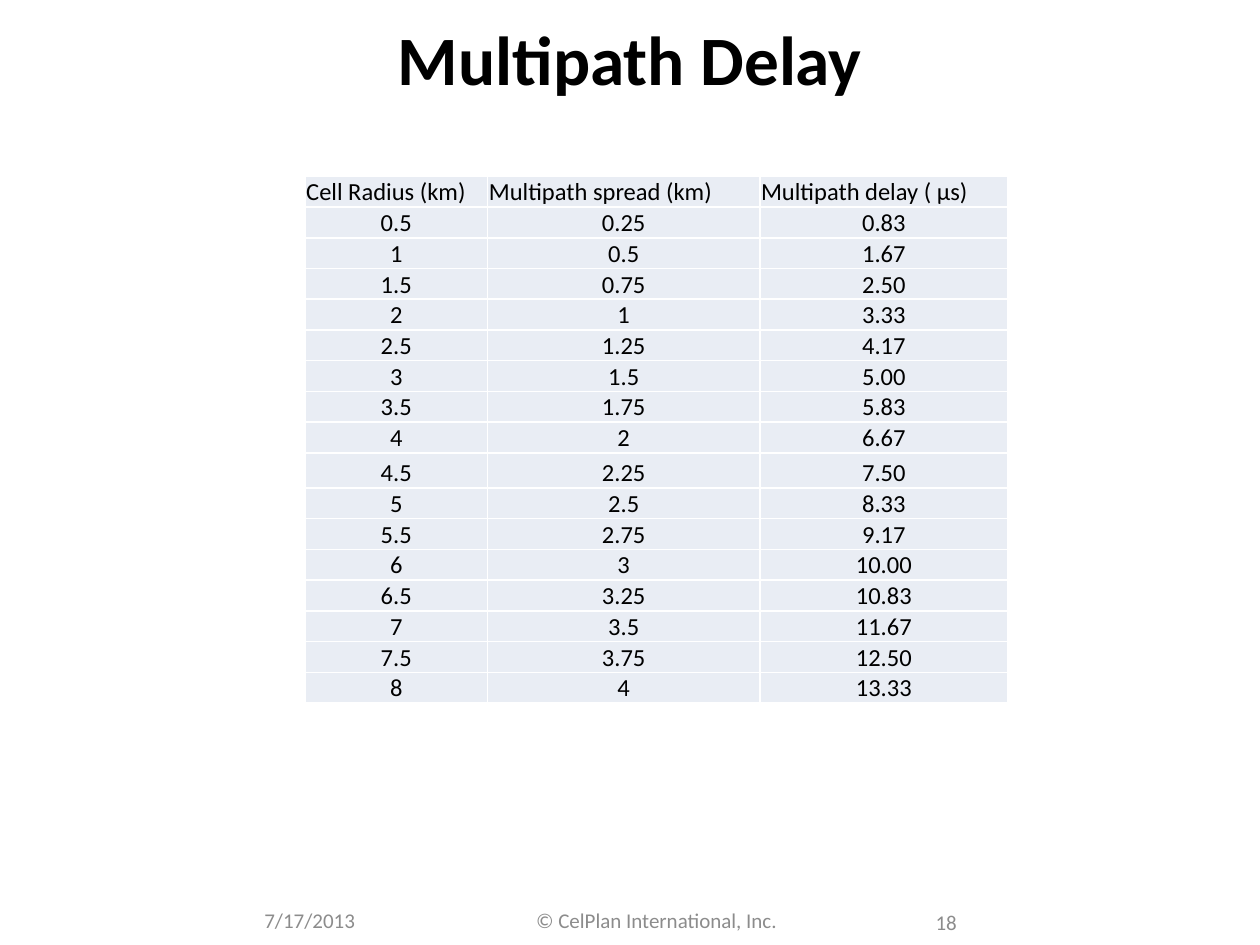
from lxml.etree import SubElement
from pptx import Presentation
from pptx.dml.color import RGBColor
from pptx.enum.text import MSO_ANCHOR, PP_ALIGN
from pptx.oxml.ns import qn
from pptx.util import Inches, Pt

COLORS = {"text": "000000", "footer": "8C8C8C", "cell": "E9EDF4", "border": "FFFFFF"}
HEADERS = ["Cell Radius (km)", "Multipath spread (km)", "Multipath delay ( μs)"]
COLUMN_WIDTHS = [1.45, 2.16, 1.97]
ROW_HEIGHT = 0.21
TALL_ROW, TALL_ROW_HEIGHT = 9, 0.28
RADIUS_STEP = 0.5
RADIUS_COUNT = 16
LIGHT_SPEED = 0.3


def style_paragraph(para, size, color, align, bold=False):
    """Set the font and alignment of one paragraph."""
    para.alignment = align
    para.font.name = "Calibri"
    para.font.size = Pt(size)
    para.font.bold = bold
    para.font.color.rgb = RGBColor.from_string(COLORS[color])


def add_title(page, left, top, width, height):
    """Place and format the title placeholder."""
    title = page.shapes.title
    title.left, title.top = Inches(left), Inches(top)
    title.width, title.height = Inches(width), Inches(height)
    title.text_frame.text = "Multipath Delay"
    title.text_frame.vertical_anchor = MSO_ANCHOR.MIDDLE
    style_paragraph(title.text_frame.paragraphs[0], 39.6, "text", PP_ALIGN.CENTER, True)


def delay_rows():
    """Return the header and the radius, spread and delay rows."""
    rows = [HEADERS]
    for step in range(1, RADIUS_COUNT + 1):
        radius = step * RADIUS_STEP
        spread = radius / 2
        rows.append([f"{radius:g}", f"{spread:g}", f"{spread / LIGHT_SPEED:.2f}"])
    return rows


def add_borders(cell):
    """Draw a thin line on all four sides of a cell."""
    properties = cell._tc.get_or_add_tcPr()
    for side in ("lnL", "lnR", "lnT", "lnB"):
        line = SubElement(properties, qn(f"a:{side}"), w=str(Pt(1)))
        fill = SubElement(line, qn("a:solidFill"))
        SubElement(fill, qn("a:srgbClr"), val=COLORS["border"])


def format_cell(cell, text, align):
    """Fill one table cell with text, margins, borders and colour."""
    cell.text = text
    cell.vertical_anchor = MSO_ANCHOR.BOTTOM
    cell.margin_left = cell.margin_right = cell.margin_top = Inches(0.01)
    cell.margin_bottom = 0
    add_borders(cell)
    cell.fill.solid()
    cell.fill.fore_color.rgb = RGBColor.from_string(COLORS["cell"])
    style_paragraph(cell.text_frame.paragraphs[0], 14, "text", align)


def add_delay_table(page, left, top, width, height):
    """Add the table of multipath delay by cell radius."""
    rows = delay_rows()
    table = page.shapes.add_table(
        len(rows), len(HEADERS), Inches(left), Inches(top), Inches(width), Inches(height)
    ).table
    table.first_row = table.horz_banding = False
    for column, column_width in zip(table.columns, COLUMN_WIDTHS):
        column.width = Inches(column_width)
    for row_index, values in enumerate(rows):
        row = table.rows[row_index]
        row.height = Inches(TALL_ROW_HEIGHT if row_index == TALL_ROW else ROW_HEIGHT)
        align = PP_ALIGN.CENTER if row_index else PP_ALIGN.LEFT
        for cell, text in zip(row.cells, values):
            format_cell(cell, text, align)


def add_footer_text(page, text, left, top, width, height, align=PP_ALIGN.CENTER):
    """Add one grey footer text."""
    box = page.shapes.add_textbox(Inches(left), Inches(top), Inches(width), Inches(height))
    frame = box.text_frame
    frame.word_wrap = True
    frame.vertical_anchor = MSO_ANCHOR.MIDDLE
    frame.text = text
    style_paragraph(frame.paragraphs[0], 12, "footer", align)


def main():
    """Build and save the slide."""
    deck = Presentation()
    deck.slide_width, deck.slide_height = Inches(10), Inches(7.5)
    page = deck.slides.add_slide(deck.slide_layouts[5])
    add_footer_text(page, "7/17/2013", 2, 7.1, 1, 0.4, PP_ALIGN.LEFT)
    add_footer_text(page, "© CelPlan International, Inc. ", 3.67, 7.08, 3.12, 0.44)
    add_footer_text(page, "18", 7.26, 7.1, 0.5, 0.43)
    add_title(page, 0.25, 0.08, 9.5, 0.75)
    add_delay_table(page, 2.42, 1.4, 5.58, 4.18)
    deck.save("out.pptx")


if __name__ == "__main__":
    main()
